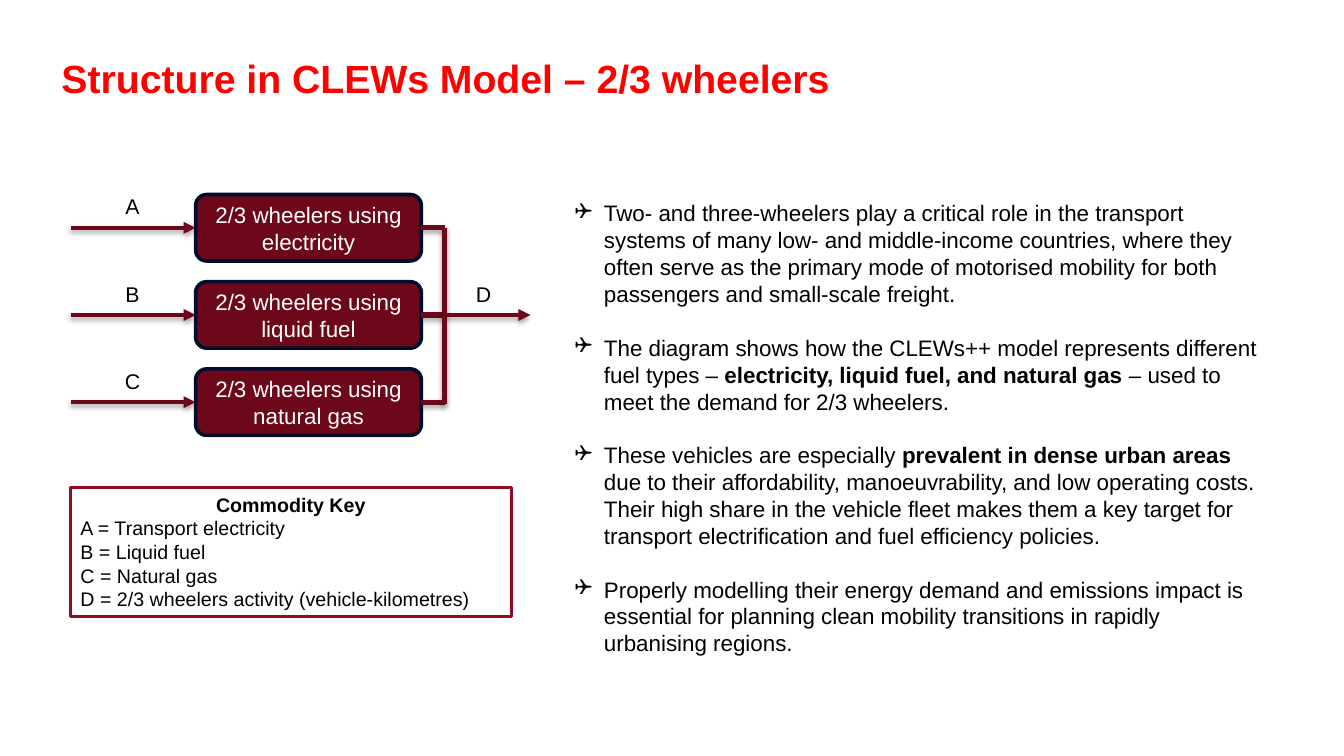
from lxml import etree
from pptx import Presentation
from pptx.dml.color import RGBColor
from pptx.enum.shapes import MSO_CONNECTOR, MSO_SHAPE
from pptx.enum.text import MSO_ANCHOR, MSO_AUTO_SIZE, PP_ALIGN
from pptx.oxml import parse_xml
from pptx.oxml.ns import nsdecls, qn
from pptx.util import Inches, Pt

# Content
TITLE = "Structure in CLEWs Model – 2/3 wheelers"
FUELS = [("A", "electricity"), ("B", "liquid fuel"), ("C", "natural gas")]
OUTPUT = "D"
KEY_TITLE = "Commodity Key"
KEY_LINES = [
    "A = Transport electricity",
    "B = Liquid fuel",
    "C = Natural gas",
    "D = 2/3 wheelers activity (vehicle-kilometres)",
]
# Each point is a list of parts; every second part is bold
POINTS = [
    ["Two- and three-wheelers play a critical role in the transport systems of many "
     "low- and middle-income countries, where they often serve as the primary mode of "
     "motorised mobility for both passengers and small-scale freight."],
    ["The diagram shows how the CLEWs++ model represents different fuel types – ",
     "electricity, liquid fuel, and natural gas",
     " – used to meet the demand for 2/3 wheelers."],
    ["These vehicles are especially ",
     "prevalent in dense urban areas",
     " due to their affordability, manoeuvrability, and low operating costs. Their high "
     "share in the vehicle fleet makes them a key target for transport electrification "
     "and fuel efficiency policies."],
    ["Properly modelling their energy demand and emissions impact is essential for "
     "planning clean mobility transitions in rapidly urbanising regions."],
]

RED = RGBColor(0xFF, 0x00, 0x00)
BLACK = RGBColor(0x00, 0x00, 0x00)
WHITE = RGBColor(0xFF, 0xFF, 0xFF)
MAROON = RGBColor(0x6C, 0x08, 0x19)
NAVY = RGBColor(0x00, 0x0D, 0x2C)
CRIMSON = RGBColor(0x91, 0x0C, 0x22)

# Diagram grid, in inches
LEFT, TOP = 0.7, 1.93
BOX_LEFT, BOX_WIDTH, BOX_HEIGHT, ROW_STEP = 1.94, 2.24, 0.66, 0.865
BOX_RIGHT = BOX_LEFT + BOX_WIDTH
BUS_X, OUTPUT_END = 4.41, 5.26
LABEL_WIDTH, LABEL_HEIGHT, LABEL_RISE = 0.91, 0.38, 0.4
MIDDLES = [TOP + BOX_HEIGHT / 2 + row * ROW_STEP for row in range(len(FUELS))]

presentation = Presentation()
presentation.slide_width, presentation.slide_height = Inches(13.33), Inches(7.5)
slide = presentation.slides.add_slide(presentation.slide_layouts[1])


def place(shape, left, top, width, height):
    shape.left, shape.top = Inches(left), Inches(top)
    shape.width, shape.height = Inches(width), Inches(height)


def format_text(paragraph, size, color, bold=False, align=PP_ALIGN.LEFT):
    paragraph.alignment = align
    for run in paragraph.runs:
        font = run.font
        font.name, font.size, font.bold = "Arial", Pt(size), bold
        font.color.rgb = color


def set_frame(frame, anchor, side, end):
    frame.word_wrap = True
    frame.auto_size = MSO_AUTO_SIZE.NONE
    frame.vertical_anchor = anchor
    frame.margin_left = frame.margin_right = Inches(side)
    frame.margin_top = frame.margin_bottom = Inches(end)


def add_line(x1, y1, x2, y2, width, arrow=False):
    line = slide.shapes.add_connector(
        MSO_CONNECTOR.STRAIGHT, Inches(x1), Inches(y1), Inches(x2), Inches(y2))
    line.line.color.rgb = MAROON
    line.line.width = Pt(width)
    if arrow:
        etree.SubElement(line.line._get_or_add_ln(), qn("a:tailEnd"), type="triangle")
    line._element.spPr.append(parse_xml(
        f'<a:effectLst {nsdecls("a")}><a:outerShdw blurRad="50800" dist="25400" '
        'dir="5400000" rotWithShape="0"><a:srgbClr val="000000"><a:alpha val="37000"/>'
        '</a:srgbClr></a:outerShdw></a:effectLst>'))
    return line


def add_label(text, left, middle):
    label = slide.shapes.add_textbox(0, 0, 0, 0)
    place(label, left, middle - LABEL_RISE, LABEL_WIDTH, LABEL_HEIGHT)
    set_frame(label.text_frame, MSO_ANCHOR.TOP, 0.13, 0.06)
    label.text_frame.text = text
    format_text(label.text_frame.paragraphs[0], 15.2, BLACK, align=PP_ALIGN.CENTER)


def add_panel(kind, left, top, width, height, line_color, line_width):
    panel = slide.shapes.add_shape(
        kind, Inches(left), Inches(top), Inches(width), Inches(height))
    panel.shadow.inherit = False
    panel.line.color.rgb = line_color
    panel.line.width = Pt(line_width)
    return panel


# Title
title = slide.shapes.title
place(title, 0.51, 0.31, 12.7, 0.75)
set_frame(title.text_frame, MSO_ANCHOR.BOTTOM, 0.1, 0.05)
title.text_frame.text = TITLE
title.text_frame.paragraphs[0].line_spacing = 0.9
format_text(title.text_frame.paragraphs[0], 28, RED, bold=True)

# Bulleted points
body = slide.placeholders[1]
place(body, 5.6, 1.93, 7.03, 4.68)
set_frame(body.text_frame, MSO_ANCHOR.TOP, 0.1, 0.05)
for index, parts in enumerate(POINTS):
    paragraph = body.text_frame.paragraphs[0] if index == 0 else body.text_frame.add_paragraph()
    properties = paragraph._p.get_or_add_pPr()
    properties.set("marL", str(Inches(0.29)))
    properties.set("indent", str(-Inches(0.29)))
    bullet_color = etree.SubElement(properties, qn("a:buClr"))
    etree.SubElement(bullet_color, qn("a:srgbClr"), val=str(BLACK))
    etree.SubElement(properties, qn("a:buFont"), typeface="Wingdings")
    etree.SubElement(properties, qn("a:buChar"), char="❑")
    paragraph.space_before = Pt(19.2 if index else 0)
    for part in parts:
        paragraph.add_run().text = part
    format_text(paragraph, 16, BLACK)
    for run in paragraph.runs[1::2]:
        run.font.bold = True

# Technology boxes with their input arrows and links to the bus
for (letter, fuel), middle in zip(FUELS, MIDDLES):
    box = add_panel(MSO_SHAPE.ROUNDED_RECTANGLE, BOX_LEFT, middle - BOX_HEIGHT / 2,
                    BOX_WIDTH, BOX_HEIGHT, NAVY, 2.54)
    box.fill.solid()
    box.fill.fore_color.rgb = MAROON
    set_frame(box.text_frame, MSO_ANCHOR.MIDDLE, 0.13, 0.06)
    box.text_frame.text = f"2/3 wheelers using {fuel}"
    format_text(box.text_frame.paragraphs[0], 16, WHITE, align=PP_ALIGN.CENTER)
    add_line(LEFT, middle, BOX_LEFT, middle, 2.86, arrow=True).end_connect(box, 1)
    add_line(BUS_X, middle, BOX_RIGHT, middle, 3.81).end_connect(box, 3)
    add_label(letter, 0.86, middle)

# Bus and output arrow
add_line(BUS_X, MIDDLES[0], BUS_X, MIDDLES[-1] + 0.02, 3.81)
add_line(BUS_X, MIDDLES[1], OUTPUT_END, MIDDLES[1], 2.86, arrow=True)
add_label(OUTPUT, 4.34, MIDDLES[1])

# Commodity key
key = add_panel(MSO_SHAPE.RECTANGLE, LEFT, 4.84, 4.37, 1.28, CRIMSON, 2.25)
key.fill.background()
set_frame(key.text_frame, MSO_ANCHOR.TOP, 0.1, 0.05)
key.text_frame.text = "\n".join([KEY_TITLE, *KEY_LINES])
heading, *entries = key.text_frame.paragraphs
format_text(heading, 14, BLACK, bold=True, align=PP_ALIGN.CENTER)
for entry in entries:
    format_text(entry, 14, BLACK)

presentation.save("out.pptx")
